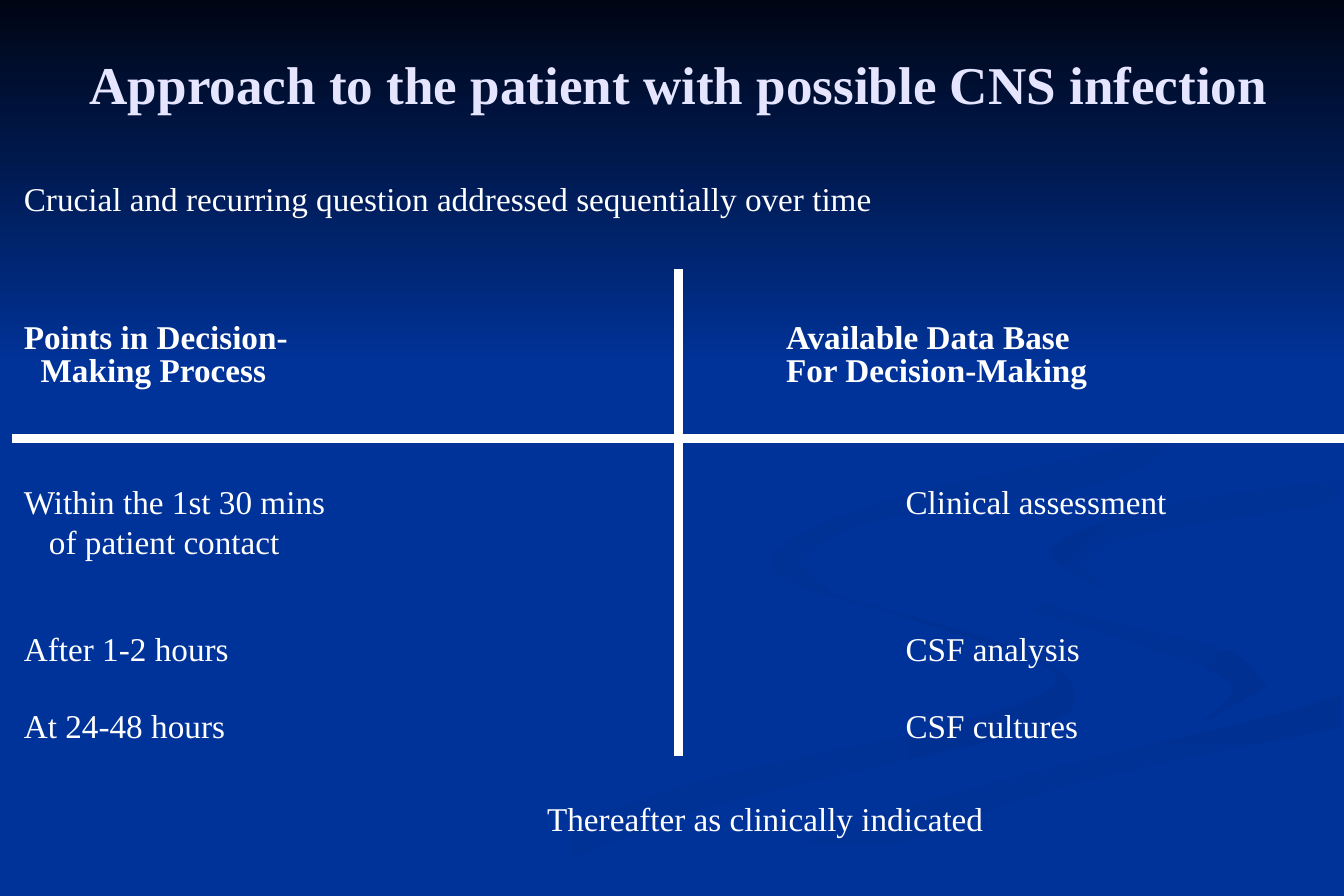
from dataclasses import dataclass

import pptx
import pptx.dml.color
import pptx.enum.shapes
import pptx.enum.text
import pptx.oxml
import pptx.oxml.ns
import pptx.util

Inches = pptx.util.Inches
Pt = pptx.util.Pt
Point = tuple[float, float]


@dataclass(frozen=True)
class Theme:
    font: str = "Times New Roman"
    title_size: int = 32
    body_size: int = 20
    rule_width: int = 5
    background: str = "003399"
    shade: str = "003091"
    night: str = "000514"
    title: str = "E5E5FF"
    text: str = "FFFFFF"


THEME = Theme()


@dataclass(frozen=True)
class Ribbon:
    """A band between two smooth edges, the second running back to the start."""
    out: list[Point]
    back: list[Point]
    start: str
    end: str
    angle: int = 0


@dataclass(frozen=True)
class Entry:
    left: float
    top: float
    lines: tuple[str, ...]
    width: float = 3.5
    hang: float = 0
    bold: bool = False
    spacing: int | None = None


@dataclass(frozen=True)
class Rule:
    x1: float
    y1: float
    x2: float
    y2: float


BLUE, SHADE = THEME.background, THEME.shade
RIBBONS = [
    Ribbon([(6.47, 4.59), (6.6, 4.87), (7.84, 5.25), (8.85, 5.66), (8, 6.06), (5.6, 6.61), (3.38, 7.49)],
           [(4.06, 7.49), (6, 6.74), (8.5, 6.14), (9, 5.81), (8.5, 5.43), (6.9, 4.96)],
           BLUE, SHADE),
    Ribbon([(8.15, 4.64), (8.5, 5.05), (9.43, 5.36), (10.3, 5.71), (10.06, 6.05)],
           [(10.6, 5.75), (10.2, 5.4), (8.9, 5.09)], BLUE, SHADE, 45),
    Ribbon([(5.66, 7.49), (7.8, 6.69), (11.23, 5.81)],
           [(11.23, 6.09), (8.8, 6.61), (6.43, 7.49)], SHADE, BLUE, 90),
    Ribbon([(5.37, 7.49), (7.9, 6.55), (10.2, 6), (10.5, 5.53), (8.7, 5.03), (8.2, 4.5), (11.24, 3.87)],
           [(11.24, 4.02), (8.8, 4.6), (11.24, 5.38), (11.24, 5.81), (7.8, 6.69), (5.66, 7.49)],
           BLUE, BLUE),
    Ribbon([(9.29, 4.96), (8.79, 4.6), (9.7, 4.24), (11.23, 4.02)],
           [(11.23, 4.2), (9.5, 4.48), (9.06, 4.74)], SHADE, BLUE, 45),
    Ribbon([(8.58, 2.33), (9.8, 2.99), (9.86, 3.6), (7.6, 4.14), (6.5, 4.62), (6.99, 5)],
           [(6.67, 4.7), (7.3, 4.36), (9.3, 4.02), (10.05, 3.4), (9.6, 2.83)],
           SHADE, BLUE, 45),
]

STAGE_X, DATA_X = 0.2, 7.58
HEADER_Y = 2.7
STAGES = [
    (4.03, ("Within the 1st 30 mins", "of patient contact"), "Clinical assessment"),
    (5.26, ("After 1-2 hours",), "CSF analysis"),
    (5.9, ("At 24-48 hours",), "CSF cultures"),
]
ENTRIES = [
    Entry(STAGE_X, 1.49, ("Crucial and recurring question addressed sequentially over time",), 10),
    Entry(STAGE_X, HEADER_Y, ("Points in Decision-", "Making Process"),
          hang=0.14, bold=True, spacing=20),
    Entry(6.58, HEADER_Y, ("Available Data Base", "For Decision-Making"), bold=True, spacing=20),
    Entry(4.58, 6.68, ("Thereafter as clinically indicated",), 5),
]
for stage_y, stage, data in STAGES:
    ENTRIES += [Entry(STAGE_X, stage_y, stage, hang=0.21), Entry(DATA_X, stage_y, (data,))]
RULES = [Rule(0.1, 3.67, 11.25, 3.67), Rule(5.68, 2.25, 5.68, 6.33)]


def rgb(code: str) -> pptx.dml.color.RGBColor:
    return pptx.dml.color.RGBColor.from_string(code)


def smooth(points: list[Point], steps: int = 6) -> list[Point]:
    """Return a Catmull-Rom curve through the points."""
    padded = [points[0], *points, points[-1]]
    curve = []
    for a, b, c, d in zip(padded, padded[1:], padded[2:], padded[3:]):
        for t in (i / steps for i in range(steps)):
            curve.append(tuple(
                q + t * (r - p + t * (2 * p - 5 * q + 4 * r - s + t * (3 * (q - r) + s - p))) / 2
                for p, q, r, s in zip(a, b, c, d)))
    return curve + [points[-1]]


def paint(sp, start: str, end: str, angle: int) -> None:
    sp.shadow.inherit = False
    sp.line.fill.background()
    sp.fill.gradient()
    sp.fill.gradient_angle = -angle % 360
    for stop, color in zip(sp.fill.gradient_stops, (start, end)):
        stop.color.rgb = rgb(color)


def add_ribbon(s, ribbon: Ribbon) -> None:
    outline = smooth(ribbon.out) + smooth(ribbon.back)
    points = [(Inches(x), Inches(y)) for x, y in outline]
    builder = s.shapes.build_freeform(*points[0])
    builder.add_line_segments(points[1:], close=True)
    paint(builder.convert_to_shape(), ribbon.start, ribbon.end, ribbon.angle)


def add_sky(s, width: int) -> None:
    sp = s.shapes.add_shape(pptx.enum.shapes.MSO_SHAPE.RECTANGLE, 0, 0, width, Inches(3.08))
    paint(sp, THEME.night, BLUE, 90)


def format_frame(tf) -> None:
    """Wrap the text and remove the inner margins."""
    formats = {"word_wrap": True, "margin_left": 0, "margin_right": 0,
               "margin_top": 0, "margin_bottom": 0}
    for name, value in formats.items():
        setattr(tf, name, value)


def add_run(p, text: str, size: int, color: str, bold: bool) -> None:
    r = p.add_run()
    r.text = text
    for name, value in {"name": THEME.font, "size": Pt(size), "bold": bold}.items():
        setattr(r.font, name, value)
    r.font.color.rgb = rgb(color)


def add_entry(s, entry: Entry) -> None:
    sp = s.shapes.add_textbox(Inches(entry.left), Inches(entry.top),
                              Inches(entry.width), Inches(0.32 * len(entry.lines)))
    tf = sp.text_frame
    format_frame(tf)
    for i, line in enumerate(entry.lines):
        p = tf.add_paragraph() if i else tf.paragraphs[0]
        if i and entry.hang:
            p._p.get_or_add_pPr().set("marL", str(Inches(entry.hang)))
        if entry.spacing:
            p.line_spacing = Pt(entry.spacing)
        add_run(p, line, THEME.body_size, THEME.text, entry.bold)


def add_rule(s, rule: Rule) -> None:
    line = s.shapes.add_connector(pptx.enum.shapes.MSO_CONNECTOR.STRAIGHT, Inches(rule.x1),
                                  Inches(rule.y1), Inches(rule.x2), Inches(rule.y2))
    line.line.color.rgb = rgb(THEME.text)
    line.line.width = Pt(THEME.rule_width)
    line._element.spPr.append(pptx.oxml.parse_xml(
        f"<a:effectLst {pptx.oxml.ns.nsdecls('a')}/>"))


def set_title(s, text: str) -> None:
    """Fill the title and bring it in front of the ribbons."""
    sp = s.shapes.title
    place = {"left": 0.62, "top": 0.25, "width": 10.13, "height": 0.9}
    for name, value in place.items():
        setattr(sp, name, Inches(value))
    tf = sp.text_frame
    format_frame(tf)
    tf.vertical_anchor = pptx.enum.text.MSO_ANCHOR.MIDDLE
    p = tf.paragraphs[0]
    p.alignment = pptx.enum.text.PP_ALIGN.CENTER
    add_run(p, text, THEME.title_size, THEME.title, True)
    sp._element.getparent().append(sp._element)


def main() -> None:
    prs = pptx.Presentation()
    prs.slide_width, prs.slide_height = Inches(11.25), Inches(7.5)
    s = prs.slides.add_slide(prs.slide_layouts[5])
    s.background.fill.solid()
    s.background.fill.fore_color.rgb = rgb(BLUE)
    for ribbon in RIBBONS:
        add_ribbon(s, ribbon)
    add_sky(s, prs.slide_width)
    set_title(s, "Approach to the patient with possible CNS infection")
    for entry in ENTRIES:
        add_entry(s, entry)
    for rule in RULES:
        add_rule(s, rule)
    prs.save("out.pptx")


if __name__ == "__main__":
    main()
